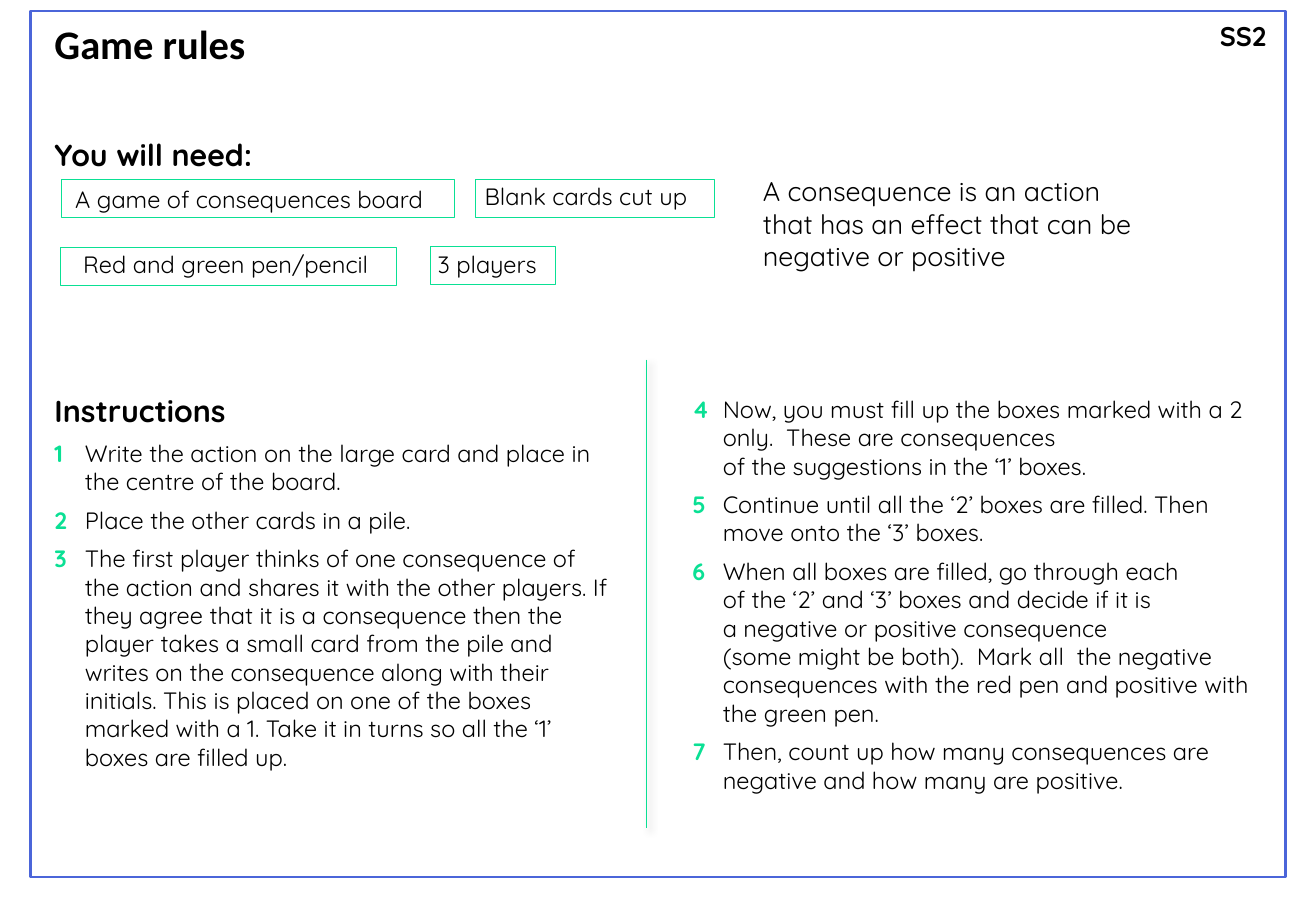
from lxml import etree
from pptx import Presentation
from pptx import util as u
from pptx.dml.color import RGBColor
from pptx.enum import shapes, text
from pptx.oxml.ns import qn

GREEN, BLUE, BLACK = "0AE094", "4B65D9", "000000"
BODY, TITLE = "Quicksand", "Calibri"

# Outline box, label box, label alignment
NEEDS = [
    ("Red and green pen/pencil", (0.5, 2.04, 2.76, 0.31), (0.48, 2.01, 2.76, 0.34), "CENTER"),
    ("3 players", (3.54, 2.03, 1.03, 0.31), (3.46, 2.01, 1.1, 0.34), "CENTER"),
    ("A game of consequences board", (0.51, 1.48, 3.23, 0.31), (0.52, 1.47, 3.31, 0.34), "LEFT"),
    ("Blank cards cut up", (3.91, 1.48, 1.97, 0.31), (3.89, 1.45, 1.97, 0.34), "LEFT"),
]
FIRST_STEPS = [
    "Write the action on the large card and place in the centre of the board.",
    "Place the other cards in a pile.",
    "The first player thinks of one consequence of the action and shares it with the other "
    "players. If they agree that it is a consequence then the player takes a small card from "
    "the pile and writes on the consequence along with their initials. This is placed on one "
    "of the boxes marked with a 1. Take it in turns so all the ‘1’ boxes are filled up.",
]
LAST_STEPS = [
    "Now, you must fill up the boxes marked with a 2 only.  These are consequences \n"
    "of the suggestions in the ‘1’ boxes.",
    "Continue until all the ‘2’ boxes are filled. Then move onto the ‘3’ boxes.",
    "When all boxes are filled, go through each \nof the ‘2’ and ‘3’ boxes and decide if it is \n"
    "a negative or positive consequence \n(some might be both).  Mark all  the negative "
    "consequences with the red pen and positive with the green pen.",
    "Then, count up how many consequences are negative and how many are positive.",
]


def colour(value):
    return RGBColor.from_string(value)


def inches(box):
    return [u.Inches(length) for length in box]


def add_span(para, words, size, bold=False, ink=BLACK, font=BODY):
    for index, line in enumerate(words.split("\n")):
        if index:
            para.add_line_break()
        span = para.add_run()
        span.text = line
        for name, value in {"size": u.Pt(size), "bold": bold, "name": font}.items():
            setattr(span.font, name, value)
        span.font.color.rgb = colour(ink)


def add_frame(page, box):
    """Add an empty text box and return its text frame."""
    frame = page.shapes.add_textbox(*inches(box)).text_frame
    frame.word_wrap = True
    frame.auto_size = text.MSO_AUTO_SIZE.SHAPE_TO_FIT_TEXT
    return frame


def add_label(page, box, words, size, align="LEFT", **style):
    frame = add_frame(page, box)
    para = frame.paragraphs[0]
    para.alignment = text.PP_ALIGN[align]
    add_span(para, words, size, **style)
    return frame


def add_outline(page, box, ink, width):
    shape = page.shapes.add_shape(shapes.MSO_SHAPE.RECTANGLE, *inches(box))
    shape.shadow.inherit = False
    shape.fill.background()
    shape.line.color.rgb = colour(ink)
    shape.line.width = u.Pt(width)


def add_steps(frame, steps, start, first_para=None):
    """Write numbered steps with a hanging indent."""
    for number, step in enumerate(steps, start):
        para = first_para if first_para is not None else frame.add_paragraph()
        if first_para is None:
            para.space_before = u.Pt(6)
        first_para = None
        properties = para._p.get_or_add_pPr()
        properties.set("marL", str(u.Inches(0.25)))
        properties.set("indent", str(-u.Inches(0.25)))
        add_span(para, str(number), 14, bold=True, ink=GREEN)
        add_span(para, "\t" + step, 14)


def add_divider(page, x, top, bottom):
    line = page.shapes.add_connector(
        shapes.MSO_CONNECTOR.STRAIGHT, *inches((x, top, x, bottom)))
    line.line.color.rgb = colour(GREEN)
    line.line.width = u.Pt(0.5)
    effects = etree.SubElement(line._element.spPr, qn("a:effectLst"))
    shadow = etree.SubElement(effects, qn("a:outerShdw"), blurRad=str(u.Pt(4)),
                              dist=str(u.Pt(3)), dir="2700000", rotWithShape="0")
    ink = etree.SubElement(shadow, qn("a:srgbClr"), val=BLACK)
    etree.SubElement(ink, qn("a:alpha"), val="40000")


def add_instructions(page, left, right):
    add_steps(frame := add_frame(page, right), LAST_STEPS, len(FIRST_STEPS) + 1,
              frame.paragraphs[0])
    add_steps(add_label(page, left, "Instructions", 18, bold=True), FIRST_STEPS, 1)
    add_divider(page, 5.32, 2.96, 6.82)


def add_needs(page, heading):
    add_label(page, heading, "You will need:", 18, bold=True)
    for words, outline, label, align in NEEDS:
        add_outline(page, outline, GREEN, 0.5)
        add_label(page, label, words, 14, align)


def add_header(page, left, right):
    add_label(page, left, "Game rules", 24, bold=True, font=TITLE)
    add_label(page, right, "SS2", 16, bold=True)


def main():
    deck = Presentation()
    deck.slide_width, deck.slide_height = inches((10.83, 7.5))
    page = deck.slides.add_slide(deck.slide_layouts[6])
    add_instructions(page, (0.35, 3.18, 4.8, 3.25), (5.6, 3.2, 4.8, 3.42))
    add_label(page, (6.18, 1.39, 3.31, 0.91),
              "A consequence is an action that has an effect that can be negative or positive", 16)
    add_needs(page, (0.35, 1.07, 2.05, 0.4))
    add_header(page, (0.35, 0.11, 8.66, 0.5), (9.94, 0.11, 1.3, 0.37))
    add_outline(page, (0.25, 0.09, 10.33, 7.13), BLUE, 1.5)
    deck.save("out.pptx")


if __name__ == "__main__":
    main()
